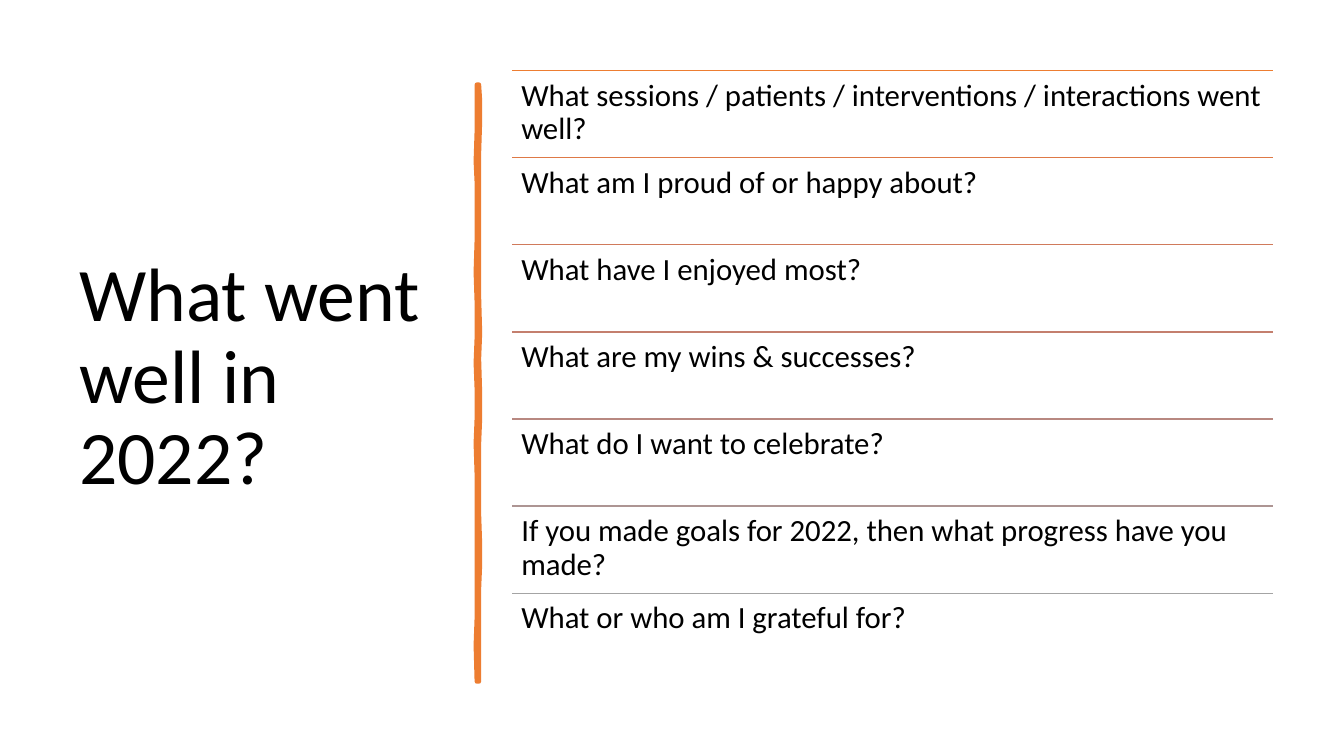
from lxml.etree import SubElement
from pptx import Presentation
from pptx.dml.color import RGBColor
from pptx.enum.shapes import MSO_CONNECTOR
from pptx.enum.text import MSO_ANCHOR
from pptx.oxml.ns import qn
from pptx.util import Inches, Pt

# Content
TITLE = "What went well in 2022?"
QUESTIONS = [
    ("What sessions / patients / interventions / interactions went well?", "ED7D31"),
    ("What am I proud of or happy about?", "DE7946"),
    ("What have I enjoyed most?", "D07A5B"),
    ("What are my wins & successes?", "C47F6E"),
    ("What do I want to celebrate?", "B88881"),
    ("If you made goals for 2022, then what progress have you made?", "AD9593"),
    ("What or who am I grateful for?", "A4A4A4"),
]
ACCENT = "ED7D31"

# Hand-drawn divider: outer edges as (x, y) in inches
RIGHT_EDGE = [(4.75, 0.84), (4.76, 1.0), (4.76, 1.2), (4.75, 1.52), (4.75, 2.94),
              (4.76, 3.3), (4.75, 3.56), (4.76, 3.9), (4.76, 4.15), (4.75, 4.4),
              (4.75, 5.1), (4.76, 5.4), (4.76, 5.6), (4.75, 5.84), (4.75, 6.76)]
LEFT_EDGE = [(4.73, 6.76), (4.72, 6.4), (4.73, 6.13), (4.73, 4.71), (4.72, 4.4),
             (4.73, 4.15), (4.73, 3.86), (4.72, 3.6), (4.73, 3.35), (4.73, 3.0),
             (4.72, 2.7), (4.73, 2.38), (4.73, 1.81), (4.72, 1.6), (4.73, 1.3),
             (4.73, 0.84)]

# Question list layout
LIST_LEFT, LIST_TOP, LIST_WIDTH, LIST_HEIGHT = 5.08, 0.7, 7.55, 6.05
ROW_HEIGHT = LIST_HEIGHT / len(QUESTIONS)


def color(hex_code):
    return RGBColor.from_string(hex_code)


def add_text(slide, text, left, top, width, height, size, margins,
             anchor=MSO_ANCHOR.TOP):
    frame = slide.shapes.add_textbox(
        Inches(left), Inches(top), Inches(width), Inches(height)).text_frame
    frame.word_wrap = True
    frame.vertical_anchor = anchor
    frame.margin_left = frame.margin_right = Inches(margins[0])
    frame.margin_top = frame.margin_bottom = Inches(margins[1])
    paragraph = frame.paragraphs[0]
    paragraph.line_spacing = 0.9
    run = paragraph.add_run()
    run.text = text
    run.font.name = "Calibri"
    run.font.size = Pt(size)
    run.font.color.rgb = color("000000")


def add_rule(slide, top, hex_code):
    rule = slide.shapes.add_connector(
        MSO_CONNECTOR.STRAIGHT, Inches(LIST_LEFT), Inches(top),
        Inches(LIST_LEFT + LIST_WIDTH), Inches(top))
    rule.line.color.rgb = color(hex_code)
    rule.line.width = Pt(1)
    SubElement(rule._element.spPr, qn("a:effectLst"))


def add_divider(slide):
    start, *outline = [(Inches(x), Inches(y)) for x, y in RIGHT_EDGE + LEFT_EDGE]
    builder = slide.shapes.build_freeform(*start)
    builder.add_line_segments(outline, close=True)
    divider = builder.convert_to_shape()
    divider.shadow.inherit = False
    divider.fill.solid()
    divider.fill.fore_color.rgb = color(ACCENT)
    divider.line.color.rgb = color(ACCENT)
    divider.line.width = Pt(3.25)
    SubElement(divider.line._get_or_add_ln(), qn("a:round"))


def main():
    deck = Presentation()
    deck.slide_width, deck.slide_height = Inches(13.33), Inches(7.5)
    slide = deck.slides.add_slide(deck.slide_layouts[6])

    # Title and divider
    add_text(slide, TITLE, 0.69, 0.7, 3.74, 6.11, size=54, margins=(0.1, 0.05),
             anchor=MSO_ANCHOR.MIDDLE)
    add_divider(slide)

    # Questions, each under its own rule
    for row, (question, rule_color) in enumerate(QUESTIONS):
        top = LIST_TOP + row * ROW_HEIGHT
        add_rule(slide, top, rule_color)
        add_text(slide, question, LIST_LEFT, top, LIST_WIDTH, ROW_HEIGHT,
                 size=22, margins=(0.09, 0.09))

    deck.save("out.pptx")


if __name__ == "__main__":
    main()
